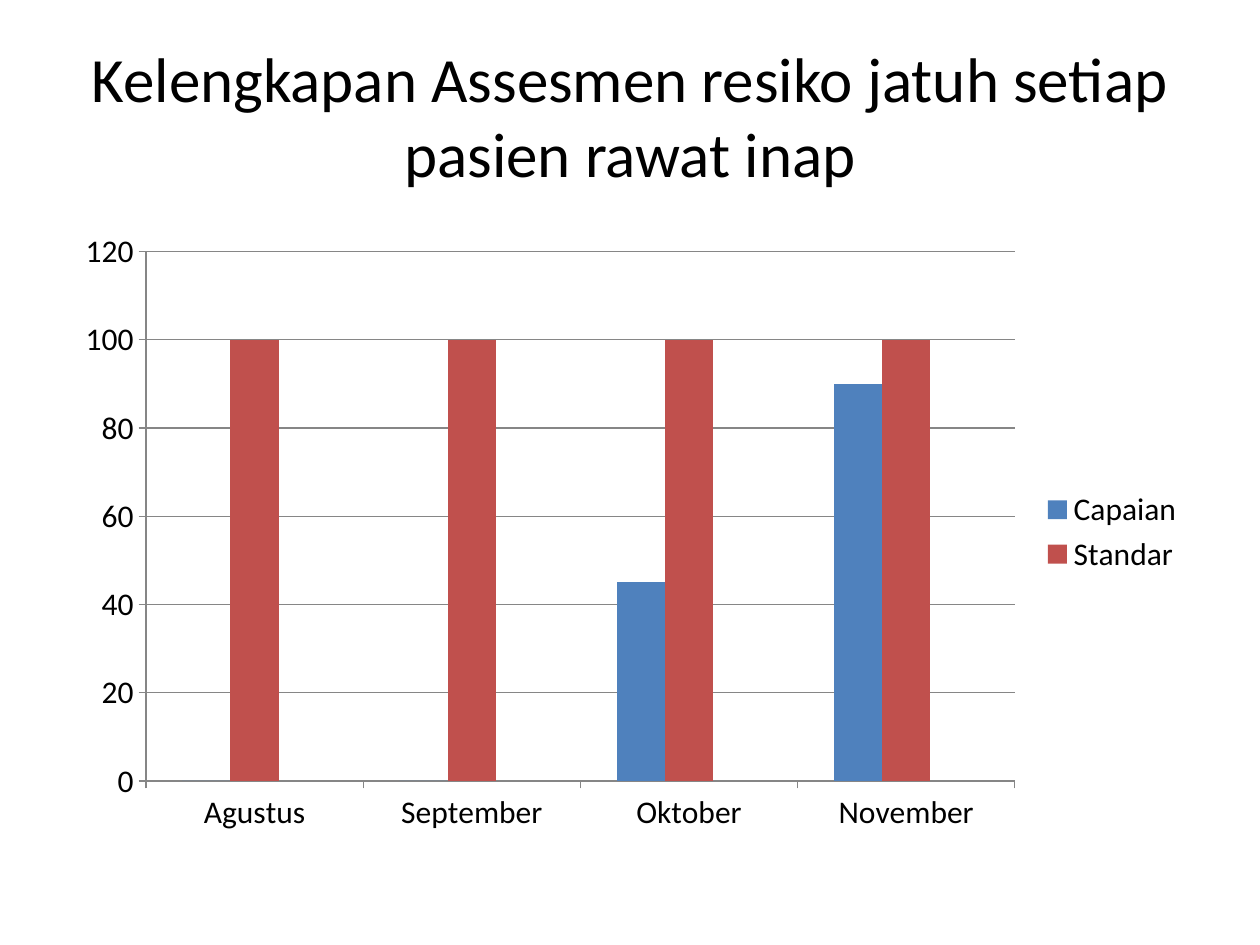
from lxml.etree import SubElement
from pptx import Presentation
from pptx.chart.data import CategoryChartData
from pptx.dml.color import RGBColor
from pptx.enum.chart import XL_CHART_TYPE, XL_LEGEND_POSITION, XL_TICK_MARK
from pptx.enum.text import MSO_ANCHOR, PP_ALIGN
from pptx.oxml.ns import qn
from pptx.util import Emu, Pt

EMU_PER_PX = 914400 / 126


def px(length):
    return Emu(round(length * EMU_PER_PX))


def color(hex_string):
    return RGBColor.from_string(hex_string)


class SlideBuilder:
    font_name = "Calibri"
    text_color = "000000"
    line_color = "868686"

    def __init__(self, slide):
        self.slide = slide

    def style_font(self, font, size):
        font.name = self.font_name
        font.size = Pt(size)
        font.color.rgb = color(self.text_color)

    def title(self, text, box, size, bottom_inset):
        shape = self.slide.shapes.add_textbox(*map(px, box))
        frame = shape.text_frame
        frame.word_wrap = True
        frame.vertical_anchor = MSO_ANCHOR.MIDDLE
        frame.margin_bottom = px(bottom_inset)
        paragraph = frame.paragraphs[0]
        paragraph.text = text
        paragraph.alignment = PP_ALIGN.CENTER
        self.style_font(paragraph.font, size)

    def column_chart(self, categories, series_rows, box, size, gap, hidden_entries):
        data = CategoryChartData()
        data.categories = categories
        for name, values, _ in series_rows:
            data.add_series(name, values)
        chart = self.slide.shapes.add_chart(
            XL_CHART_TYPE.COLUMN_CLUSTERED, *map(px, box), data).chart
        chart.has_title = False
        self.style_font(chart.font, size)

        # Columns
        plot = chart.plots[0]
        plot.gap_width = gap
        plot.overlap = 0
        plot.vary_by_categories = False
        for series, (_, _, fill) in zip(plot.series, series_rows):
            series.format.fill.solid()
            series.format.fill.fore_color.rgb = color(fill)

        # Axes and gridlines
        value_axis = chart.value_axis
        value_axis.has_major_gridlines = True
        value_axis.minimum_scale, value_axis.maximum_scale = 0, 120
        value_axis.major_unit = 20
        for axis in (chart.category_axis, value_axis):
            axis.major_tick_mark = XL_TICK_MARK.OUTSIDE
            axis.minor_tick_mark = XL_TICK_MARK.NONE
        for part in (chart.category_axis, value_axis, value_axis.major_gridlines):
            part.format.line.color.rgb = color(self.line_color)
            part.format.line.width = Pt(0.75)

        # Legend
        chart.has_legend = True
        legend = chart.legend
        legend.position = XL_LEGEND_POSITION.RIGHT
        legend.include_in_layout = False
        position = legend._element.find(qn("c:legendPos"))
        for index in reversed(hidden_entries):
            entry = SubElement(legend._element, qn("c:legendEntry"))
            SubElement(entry, qn("c:idx")).set("val", str(index))
            SubElement(entry, qn("c:delete")).set("val", "1")
            position.addnext(entry)


def main():
    presentation = Presentation()
    presentation.slide_width, presentation.slide_height = px(1260), px(945)
    builder = SlideBuilder(presentation.slides.add_slide(presentation.slide_layouts[6]))

    # Title
    builder.title("Kelengkapan Assesmen resiko jatuh setiap pasien rawat inap",
                  (63, 73, 1134, 158), size=36, bottom_inset=81)

    # Monthly achievement against the standard; the empty series keeps its slot
    builder.column_chart(
        ["Agustus", "September", "Oktober", "November"],
        [("Capaian", [0, 0, 45, 90], "4F81BD"),
         ("Standar", [100] * 4, "C0504D"),
         ("Series 3", [None] * 4, "9BBB59")],
        (63, 220, 1134, 624), size=18, gap=150, hidden_entries=[2])

    presentation.save("out.pptx")


if __name__ == "__main__":
    main()
